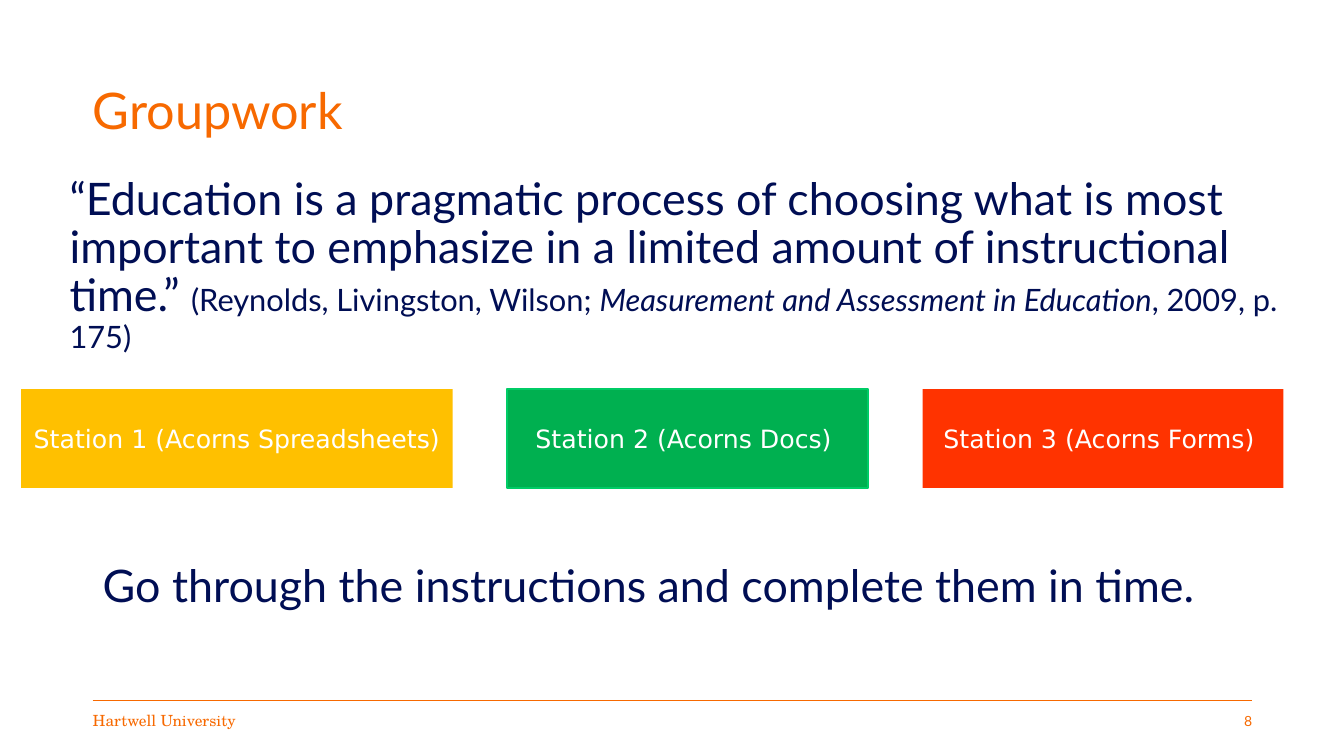
from dataclasses import dataclass

import pptx
import pptx.dml.color
import pptx.enum.shapes
import pptx.enum.text
import pptx.util
from pptx.enum.text import MSO_ANCHOR, PP_ALIGN
from pptx.util import Inches, Pt


@dataclass(frozen=True)
class Theme:
    orange: str = "F76900"
    navy: str = "000E54"
    white: str = "FFFFFF"
    yellow: str = "FFC000"
    green: str = "00B050"
    green_edge: str = "00CC66"
    red: str = "FF3300"
    sans: str = "Lato"
    serif: str = "TeX Gyre Schola"
    station: str = "DejaVu Sans"
    title_size: int = 36
    body_size: int = 32
    citation_size: int = 22
    station_size: int = 18
    footer_size: int = 11
    number_size: int = 10


T = Theme()
rgb = pptx.dml.color.RGBColor.from_string


def style_text(sp, size, color, name=T.sans, align=PP_ALIGN.LEFT,
               anchor=MSO_ANCHOR.MIDDLE, inset=0, wrap=True):
    """Format the frame and first paragraph of a shape; return the paragraph."""
    tf = sp.text_frame
    tf.auto_size = pptx.enum.text.MSO_AUTO_SIZE.NONE
    tf.word_wrap = wrap
    tf.vertical_anchor = anchor
    tf.margin_left = tf.margin_right = Inches(inset)
    tf.margin_top = tf.margin_bottom = Inches(0.05)
    p = tf.paragraphs[0]
    p.alignment = align
    p.font.size, p.font.name = Pt(size), name
    p.font.color.rgb = rgb(color)
    return p


prs = pptx.Presentation()
prs.slide_width, prs.slide_height = Inches(13.33), Inches(7.5)
s = prs.slides.add_slide(prs.slide_layouts[5])

# Footer
rule = s.shapes.add_connector(pptx.enum.shapes.MSO_CONNECTOR.STRAIGHT,
                              Inches(0.92), Inches(6.95), Inches(12.42), Inches(6.95))
rule.line.color.rgb = rgb(T.orange)
rule.line.width = Pt(0.5)
rule._element.spPr.append(pptx.oxml.xmlchemy.OxmlElement("a:effectLst"))

for left, text, size, name, align in [
    (0.92, "Hartwell University", T.footer_size, T.serif, PP_ALIGN.LEFT),
    (10.32, "8", T.number_size, T.sans, PP_ALIGN.RIGHT),
]:
    sp = s.shapes.add_textbox(Inches(left), Inches(6.95), Inches(2.1), Inches(0.4))
    sp.text_frame.text = text
    style_text(sp, size, T.orange, name, align, wrap=False)

# Title
title = s.shapes.title
title.left, title.top = Inches(0.92), Inches(0.4)
title.width, title.height = Inches(11.5), Inches(1.45)
title.text_frame.text = "Groupwork"
p = style_text(title, T.title_size, T.orange)
p.line_spacing = 0.9

# Quotation with its citation
quote = s.shapes.add_textbox(Inches(0.69), Inches(1.7), Inches(12.04), Inches(1.75))
p = style_text(quote, T.body_size, T.navy, anchor=MSO_ANCHOR.TOP)
p.line_spacing = 0.9
p.space_after = Pt(12)
for text, size, italic in [
    ("“Education is a pragmatic process of choosing what is most important to "
     "emphasize in a limited amount of instructional time.” ", T.body_size, False),
    ("(Reynolds, Livingston, Wilson; ", T.citation_size, False),
    ("Measurement and Assessment in Education", T.citation_size, True),
    (", 2009, p. 175)", T.citation_size, False),
]:
    r = p.add_run()
    r.text = text
    r.font.size, r.font.italic = Pt(size), italic

# Stations, separated by equal gaps
left, gap = 0.21, 0.54
for text, width, fill, edge in [
    ("Station 1 (Acorns Spreadsheets) ", 4.28, T.yellow, None),
    ("Station 2 (Acorns Docs) ", 3.58, T.green, T.green_edge),
    ("Station 3 (Acorns Forms) ", 3.58, T.red, None),
]:
    sp = s.shapes.add_shape(pptx.enum.shapes.MSO_SHAPE.RECTANGLE,
                            Inches(left), Inches(3.86), Inches(width), Inches(0.98))
    sp.shadow.inherit = False
    sp.fill.solid()
    sp.fill.fore_color.rgb = rgb(fill)
    if edge:
        sp.line.color.rgb = rgb(edge)
        sp.line.width = Pt(1)
    else:
        sp.line.fill.background()
    sp.text_frame.text = text
    style_text(sp, T.station_size, T.white, T.station, PP_ALIGN.CENTER, inset=0.1)
    left += width + gap

# Closing instruction
task = s.shapes.add_textbox(Inches(0.92), Inches(5.48), Inches(11.38), Inches(0.64))
task.text_frame.text = "Go through the instructions and complete them in time."
style_text(task, T.body_size, T.navy, anchor=MSO_ANCHOR.TOP, inset=0.1)

prs.save("out.pptx")
